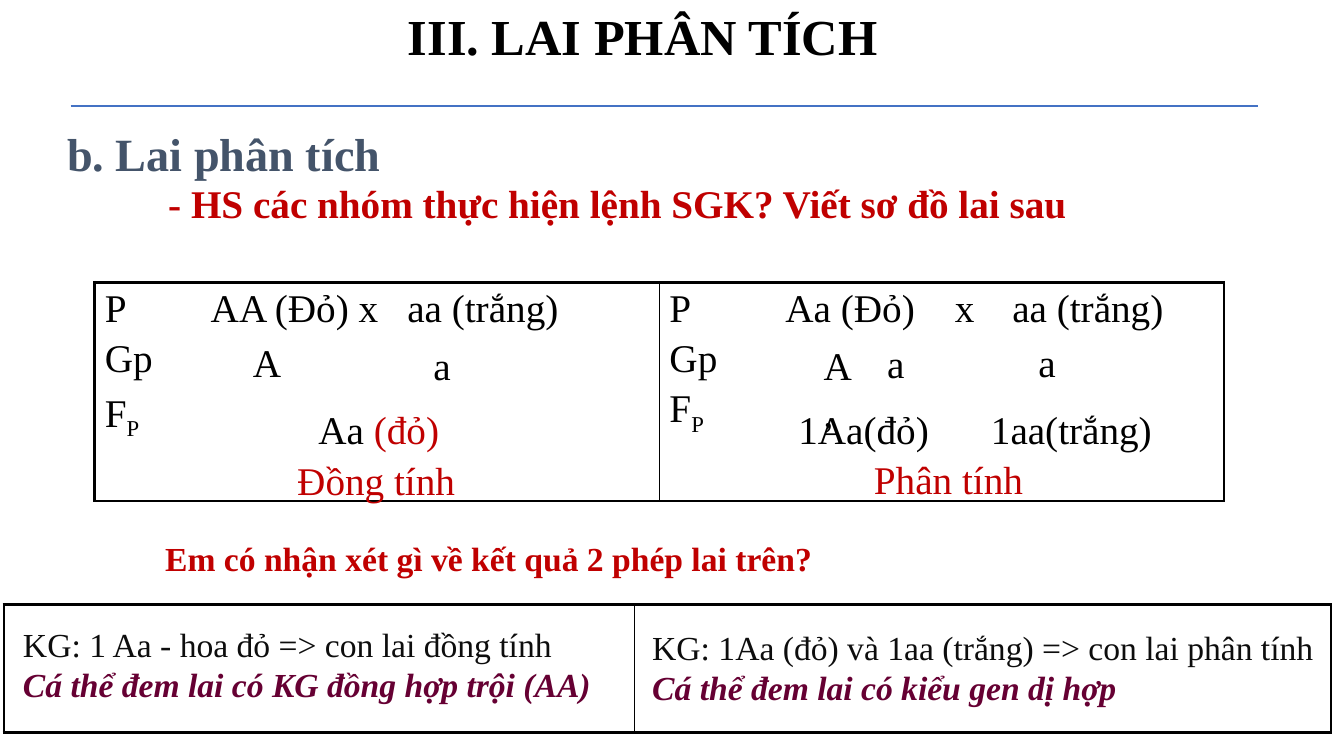
import pptx
import pptx.dml.color
import pptx.enum.shapes
import pptx.enum.text
import pptx.oxml.ns
import pptx.util
from lxml import etree
from pptx.util import Inches

COLOURS = {"black": "000000", "rule": "4472C4", "slate": "44546A", "red": "C00000",
           "ink": "0D0D0D", "plum": "660033"}
FONT = "Times New Roman"
THICK, THIN = 2.25, 1

# A run is (text, colour, style); style holds b for bold, i for italic, _ for subscript.
# A label is (left, top, width, height, size, centred, paragraphs of runs).
HEADINGS = [
    (0.22, 1.19, 4, 0.53, 33, True, [[("b. Lai phân tích", "slate", "b")]]),
    (2.12, 0, 8.51, 0.71, 36, True, [[("III. LAI PHÂN TÍCH", "black", "b")]]),
]
TASK = (1.57, 1.73, 9.12, 0.57, 28, False,
        [[("- HS các nhóm thực hiện lệnh SGK? Viết sơ đồ lai sau", "red", "b")]])
QUESTION = (1.54, 5.29, 10, 0.5, 24, False,
            [[("Em có nhận xét gì về kết quả 2 phép lai trên?", "red", "b")]])

# Parents of each cross, the tab stops between them, and the gap above the offspring row
CROSSES = [
    ("P\tAA (Đỏ) x\taa (trắng)", [1.05, 3.0], 8),
    ("P\tAa (Đỏ)\tx\taa (trắng)", [1.15, 2.83, 3.4], 5),
]
CROSS_SIZE = 28
ROW_GAP = 5

# Gametes and offspring: left, top, width, runs
CROSS_LABELS = [
    (2.41, 3.31, 0.67, [("A", "black", "")]),
    (4.2, 3.34, 0.67, [("a", "black", "")]),
    (3.06, 3.97, 1.75, [("Aa ", "black", ""), ("(đỏ)", "red", "")]),
    (8.07, 3.34, 0.5, [("A,", "black", "")]),
    (8.7, 3.32, 0.67, [("a", "black", "")]),
    (10.2, 3.31, 0.67, [("a", "black", "")]),
    (7.82, 3.97, 1.83, [("1Aa(đỏ)", "black", "")]),
    (9.73, 3.97, 2.25, [("1aa(trắng)", "black", "")]),
    (2.85, 4.48, 2.17, [("Đồng tính", "red", "")]),
    (8.57, 4.47, 2.17, [("Phân tính", "red", "")]),
]

# Left, top, width, result, conclusion
CONCLUSIONS = [
    (0.13, 6.14, 6.67, "KG: 1 Aa - hoa đỏ => con lai đồng tính",
     "Cá thể đem lai có KG đồng hợp trội (AA)"),
    (6.37, 6.17, 7.18, "KG: 1Aa (đỏ) và 1aa (trắng) => con lai phân tính",
     "Cá thể đem lai có kiểu gen dị hợp"),
]


def rgb(name):
    return pptx.dml.color.RGBColor.from_string(COLOURS[name])


def add_runs(paragraph, runs, size):
    for text, colour, style in runs:
        run = paragraph.add_run()
        run.text = text
        run.font.name = FONT
        run.font.size = pptx.util.Pt(size)
        run.font.color.rgb = rgb(colour)
        run.font.bold = "b" in style
        run.font.italic = "i" in style
        if "_" in style:
            run.font._element.set("baseline", "-25000")


def add_label(slide, left, top, width, height, size, centred, paragraphs, wrap=True):
    box = slide.shapes.add_textbox(*map(Inches, (left, top, width, height)))
    frame = box.text_frame
    frame.word_wrap = wrap
    if not wrap:
        frame.auto_size = pptx.enum.text.MSO_AUTO_SIZE.SHAPE_TO_FIT_TEXT
    for index, runs in enumerate(paragraphs):
        paragraph = frame.add_paragraph() if index else frame.paragraphs[0]
        if centred:
            paragraph.alignment = pptx.enum.text.PP_ALIGN.CENTER
        add_runs(paragraph, runs, size)


def set_borders(cell, widths):
    """Draw the left, right, top and bottom borders, widths in points."""
    properties = cell._tc.get_or_add_tcPr()
    for index, (side, width) in enumerate(zip("LRTB", widths)):
        border = etree.Element(pptx.oxml.ns.qn(f"a:ln{side}"), w=str(pptx.util.Pt(width)))
        fill = etree.SubElement(border, pptx.oxml.ns.qn("a:solidFill"))
        etree.SubElement(fill, pptx.oxml.ns.qn("a:srgbClr"), val=COLOURS["black"])
        properties.insert(index, border)


def add_framed_pair(slide, left, top, column_widths, height):
    """Add a one-row table of two cells with a thick frame and a thin divider."""
    table = slide.shapes.add_table(1, 2, Inches(left), Inches(top),
                                   Inches(sum(column_widths)), Inches(height)).table
    table.first_row = table.horz_banding = False
    for column, width in zip(table.columns, column_widths):
        column.width = Inches(width)
    cells = [table.cell(0, 0), table.cell(0, 1)]
    for cell, sides in zip(cells, [(THICK, THIN), (THIN, THICK)]):
        cell.fill.background()
        set_borders(cell, (*sides, THICK, THICK))
    return cells


def add_tab_stops(paragraph, stops):
    tab_list = etree.SubElement(paragraph._p.get_or_add_pPr(), pptx.oxml.ns.qn("a:tabLst"))
    for stop in stops:
        etree.SubElement(tab_list, pptx.oxml.ns.qn("a:tab"), pos=str(Inches(stop)), algn="l")


def fill_cross(cell, parents, stops, offspring_gap):
    frame = cell.text_frame
    parent_row = frame.paragraphs[0]
    add_tab_stops(parent_row, stops)
    add_runs(parent_row, [(parents, "black", "")], CROSS_SIZE)
    lower_rows = [([("Gp", "black", "")], ROW_GAP),
                  ([("F", "black", ""), ("P", "black", "_")], offspring_gap)]
    for runs, gap in lower_rows:
        row = frame.add_paragraph()
        row.space_before = pptx.util.Pt(gap)
        add_runs(row, runs, CROSS_SIZE)


def add_rule(slide, left, right, y):
    rule = slide.shapes.add_connector(pptx.enum.shapes.MSO_CONNECTOR.STRAIGHT,
                                      Inches(left), Inches(y), Inches(right), Inches(y))
    rule.line.color.rgb = rgb("rule")
    rule.line.width = pptx.util.Pt(1.5)
    etree.SubElement(rule._element.spPr, pptx.oxml.ns.qn("a:effectLst"))


def main():
    deck = pptx.Presentation()
    deck.slide_width, deck.slide_height = Inches(13.33), Inches(7.5)
    slide = deck.slides.add_slide(deck.slide_layouts[6])

    add_rule(slide, 0.7, 12.48, 1.05)
    for heading in HEADINGS:
        add_label(slide, *heading)
    add_label(slide, *TASK, wrap=False)

    cross_cells = add_framed_pair(slide, 0.94, 2.8, [5.6, 5.6], 2.17)
    for cell, cross in zip(cross_cells, CROSSES):
        fill_cross(cell, *cross)
    for left, top, width, runs in CROSS_LABELS:
        add_label(slide, left, top, width, 0.57, CROSS_SIZE, False, [runs])

    add_label(slide, *QUESTION)
    add_framed_pair(slide, 0.04, 6, [6.25, 6.91], 1.27)
    for left, top, width, result, conclusion in CONCLUSIONS:
        add_label(slide, left, top, width, 0.91, 24, False,
                  [[(result, "ink", "")], [(conclusion, "plum", "bi")]])

    deck.save("out.pptx")


if __name__ == "__main__":
    main()
